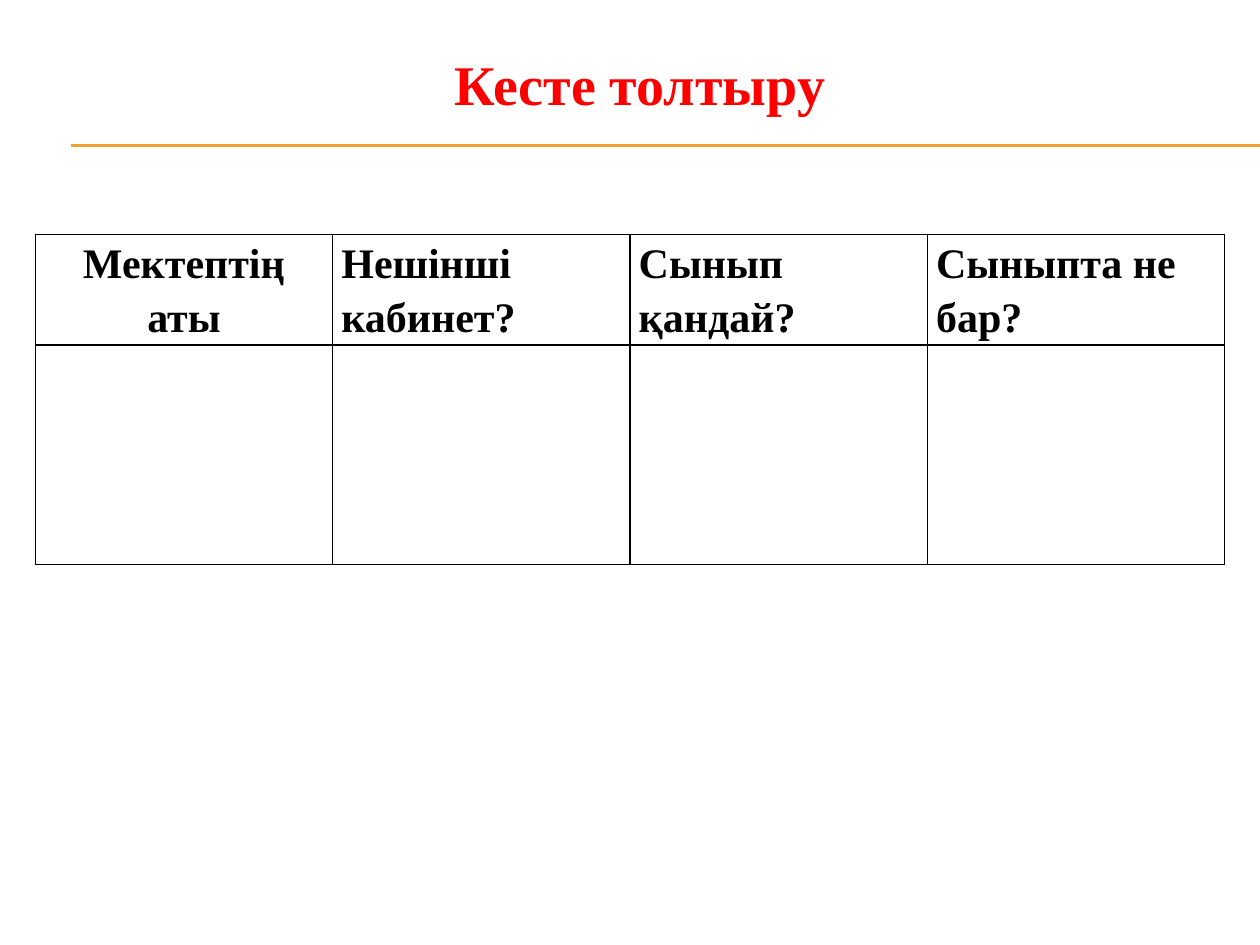
from lxml import etree
from pptx import Presentation
from pptx import util as u
from pptx.dml.color import RGBColor
from pptx.enum import shapes, text
from pptx.oxml.ns import qn

FONT = "Times New Roman"
HEADINGS = ["Мектептің аты", "Нешінші кабинет?", "Сынып қандай?", "Сыныпта не бар?"]
ROW_HEIGHTS = [0.88, 1.74]
COLUMN_WIDTH = 2.36


def colour(hex_value):
    return RGBColor.from_string(hex_value)


def format_text(frame, size, hex_value, align):
    """Apply font and alignment to a one-paragraph text frame."""
    paragraph = frame.paragraphs[0]
    paragraph.alignment = align
    font = paragraph.runs[0].font
    font.color.rgb = colour(hex_value)
    for name, value in {"name": FONT, "size": u.Pt(size), "bold": True}.items():
        setattr(font, name, value)
    return paragraph


def add_title(slide, wording):
    title = slide.shapes.title
    place = {"left": 0.33, "top": 0.29, "width": 9.5, "height": 0.74}
    for name, value in place.items():
        setattr(title, name, u.Inches(value))
    title.text_frame.text = wording
    title.text_frame.vertical_anchor = text.MSO_ANCHOR.MIDDLE
    format_text(title.text_frame, 32, "FF0000", text.PP_ALIGN.CENTER)


def add_rule(slide, y):
    rule = slide.shapes.add_connector(
        shapes.MSO_CONNECTOR.STRAIGHT,
        u.Inches(0.56), u.Inches(y), u.Inches(10), u.Inches(y))
    rule.line.color.rgb = colour("F0A22E")
    rule.line.width = u.Pt(0.75)
    etree.SubElement(rule._element.spPr, qn("a:effectLst"))


def border_cell(cell):
    """Draw a 1 pt black line on all four sides, ahead of the fill."""
    properties = cell._tc.get_or_add_tcPr()
    for index, side in enumerate(("lnL", "lnR", "lnT", "lnB")):
        line = etree.Element(qn(f"a:{side}"), w=str(u.Pt(1)))
        fill = etree.SubElement(line, qn("a:solidFill"))
        etree.SubElement(fill, qn("a:srgbClr"), val="000000")
        properties.insert(index, line)


def add_worksheet(slide):
    worksheet = slide.shapes.add_table(
        len(ROW_HEIGHTS), len(HEADINGS), u.Inches(0.28), u.Inches(1.86),
        u.Inches(COLUMN_WIDTH * len(HEADINGS)), u.Inches(sum(ROW_HEIGHTS))).table
    worksheet.first_row = worksheet.horz_banding = False
    for column in worksheet.columns:
        column.width = u.Inches(COLUMN_WIDTH)
    for row, height in zip(worksheet.rows, ROW_HEIGHTS):
        row.height = u.Inches(height)

    margins = {"margin_left": 0.07, "margin_right": 0.07,
               "margin_top": 0, "margin_bottom": 0}
    for cell in worksheet.iter_cells():
        for name, value in margins.items():
            setattr(cell, name, u.Inches(value))
        cell.fill.background()
        border_cell(cell)

    # Heading row: only the first column is centred
    for index, heading in enumerate(HEADINGS):
        cell = worksheet.cell(0, index)
        cell.text = heading
        align = text.PP_ALIGN.LEFT if index else text.PP_ALIGN.CENTER
        format_text(cell.text_frame, 24, "000000", align).line_spacing = 1.15


def main():
    deck = Presentation()
    deck.slide_width, deck.slide_height = u.Inches(10), u.Inches(7.5)
    slide = deck.slides.add_slide(deck.slide_layouts[5])  # Title Only

    # Double rule under the title
    for y in (1.15, 1.16):
        add_rule(slide, y)
    add_title(slide, "Кесте толтыру")
    add_worksheet(slide)
    deck.save("out.pptx")


if __name__ == "__main__":
    main()
